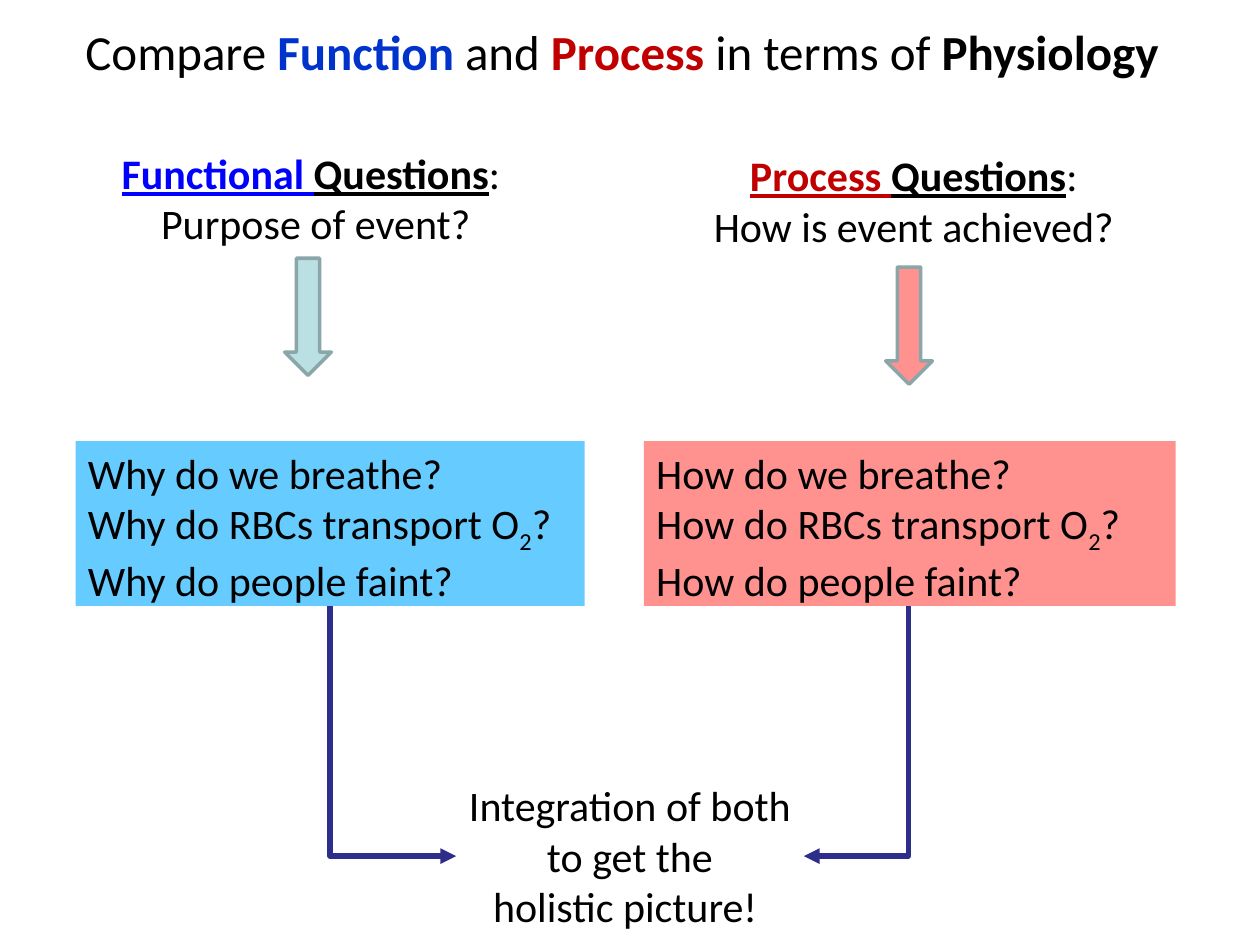
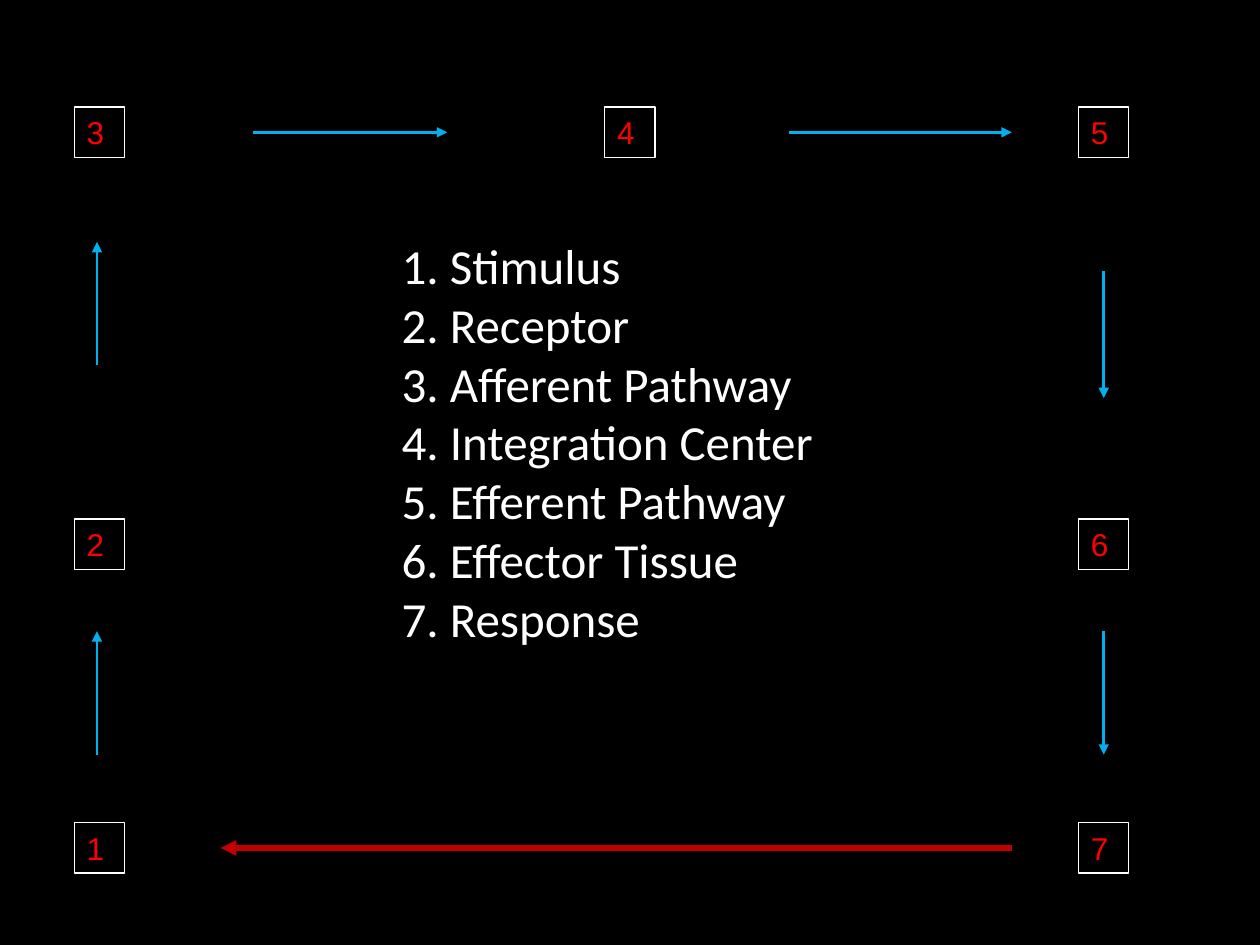
from lxml.etree import SubElement
from pptx import Presentation
from pptx.dml.color import RGBColor
from pptx.enum.shapes import MSO_CONNECTOR, MSO_SHAPE
from pptx.enum.text import MSO_ANCHOR, PP_ALIGN
from pptx.oxml.ns import qn
from pptx.util import Inches, Pt

BLACK, WHITE, RED = "000000", "FFFFFF", "C00000"
FUNCTION_BLUE, PROCESS_PINK = "66CCFF", "FF928F"
PATHWAY_BLUE, INTEGRATION_NAVY = "00B0F0", "2D2D8A"


def rgb(hex_colour):
    return RGBColor.from_string(hex_colour)


def inches(*lengths):
    return [Inches(length) for length in lengths]


def new_slide(deck, background):
    slide = deck.slides.add_slide(deck.slide_layouts[6])
    slide.background.fill.solid()
    slide.background.fill.fore_color.rgb = rgb(background)
    return slide


def write(shape, paragraphs, size, colour=BLACK, font="Calibri", align=PP_ALIGN.LEFT):
    """Fill a shape with paragraphs, each a list of (text, style) runs."""
    frame = shape.text_frame
    frame.word_wrap = True
    frame.vertical_anchor = MSO_ANCHOR.TOP
    for index, runs in enumerate(paragraphs):
        paragraph = frame.add_paragraph() if index else frame.paragraphs[0]
        paragraph.alignment = align
        for text, style in runs:
            run = paragraph.add_run()
            run.text = text
            run.font.name, run.font.size = font, Pt(size)
            run.font.color.rgb = rgb(style.get("colour", colour))
            run.font.bold = style.get("bold", False)
            run.font.underline = style.get("underline", False)
            if "baseline" in style:
                run._r.get_or_add_rPr().set("baseline", str(style["baseline"]))


def add_text(slide, box, paragraphs, size, **options):
    write(slide.shapes.add_textbox(*inches(*box)), paragraphs, size, **options)


def add_block(slide, kind, box, fill=None, line=None, width=0.75):
    block = slide.shapes.add_shape(kind, *inches(*box))
    block.shadow.inherit = False
    if fill:
        block.fill.solid()
        block.fill.fore_color.rgb = rgb(fill)
    else:
        block.fill.background()
    if line:
        block.line.color.rgb = rgb(line)
        block.line.width = Pt(width)
    else:
        block.line.fill.background()
    return block


def add_arrow(slide, start, end, colour, width, kind=MSO_CONNECTOR.STRAIGHT):
    arrow = slide.shapes.add_connector(kind, *inches(*start, *end))
    arrow.line.color.rgb = rgb(colour)
    arrow.line.width = Pt(width)
    SubElement(arrow.line._get_or_add_ln(), qn("a:tailEnd"), type="triangle")
    SubElement(arrow._element.spPr, qn("a:effectLst"))
    return arrow


def add_corner_arrow(slide, start, end):
    """Arrow that runs straight down from start, then sideways to end."""
    (x1, y1), (x2, y2) = start, end
    mid_x, mid_y = (x1 + x2) / 2, (y1 + y2) / 2
    half_w, half_h = (y2 - y1) / 2, abs(x2 - x1) / 2
    arrow = add_arrow(slide, (mid_x - half_w, mid_y - half_h),
                      (mid_x + half_w, mid_y + half_h),
                      INTEGRATION_NAVY, 3, MSO_CONNECTOR.ELBOW)
    properties = arrow._element.spPr
    properties.find(qn("a:prstGeom")).set("prst", "bentConnector2")
    turn = properties.find(qn("a:xfrm"))
    turn.set("rot", str((270 if x2 > x1 else 90) * 60000))
    if x2 > x1:
        turn.set("flipH", "1")


def question_column(slide, heading_box, topic, topic_colour, meaning,
                    arrow_at, arrow_fill, examples_box, examples_fill, asker):
    marked = {"bold": True, "underline": True}
    add_text(slide, heading_box,
             [[(f"{topic} ", {**marked, "colour": topic_colour}),
               ("Questions", marked), (": ", {})],
              [(meaning, {})]], 24, align=PP_ALIGN.CENTER)
    examples = add_block(slide, MSO_SHAPE.RECTANGLE, examples_box, examples_fill)
    write(examples,
          [[(f"{asker} do we breathe?", {})],
           [(f"{asker} do RBCs transport O", {}), ("2", {"baseline": -25000}),
            (f"? {asker} do people faint?", {})]], 24)
    add_block(slide, MSO_SHAPE.DOWN_ARROW, (*arrow_at, 0.37, 0.93),
              arrow_fill, "8AA6A8", 2)


def comparison_slide(deck):
    slide = new_slide(deck, WHITE)
    add_text(slide, (0.58, 0.12, 8.83, 0.57),
             [[("Compare ", {}),
               ("Function ", {"colour": "0033CC", "bold": True}),
               ("and ", {}),
               ("Process ", {"colour": RED, "bold": True}),
               ("in terms of ", {}),
               ("Physiology", {"bold": True})]], 28)
    question_column(slide, (0.6, 1.12, 3.81, 0.91), "Functional", "0000FF",
                    "Purpose of event?", (2.26, 2.05), "BBE0E3",
                    (0.6, 3.5, 4.04, 1.31), FUNCTION_BLUE, "Why")
    question_column(slide, (5.33, 1.14, 3.92, 0.91), "Process", RED,
                    "How is event achieved? ", (7.03, 2.12), PROCESS_PINK,
                    (5.11, 3.5, 4.22, 1.31), PROCESS_PINK, "How")

    left, top, width, height = integration = (3.62, 6.14, 2.76, 1.31)
    add_text(slide, integration,
             [[("Integration of both to get the", {})],
              [("holistic picture! ", {})]], 24, align=PP_ALIGN.CENTER)
    middle = top + height / 2
    add_corner_arrow(slide, (2.62, 4.81), (left, middle))
    add_corner_arrow(slide, (7.21, 4.81), (left + width, middle))


def reflex_loop_slide(deck):
    slide = new_slide(deck, BLACK)
    stages = ["Stimulus", "Receptor", "Afferent Pathway", "Integration Center",
              "Efferent Pathway", "Effector Tissue", "Response"]
    add_text(slide, (3.09, 1.82, 3.93, 3.4),
             [[(f"{number}. {stage}", {})] for number, stage in enumerate(stages, 1)],
             28, colour=WHITE)

    left, centre, right = 0.59, 4.8, 8.56
    top, middle, bottom = 0.85, 4.12, 6.53
    side = 0.4
    stage_corners = [(left, bottom), (left, middle), (left, top), (centre, top),
                     (right, top), (right, middle), (right, bottom)]
    for number, corner in enumerate(stage_corners, 1):
        label = add_block(slide, MSO_SHAPE.RECTANGLE, (*corner, side, side), line=WHITE)
        write(label, [[(str(number), {})]], 18, colour="FF0000", font="Arial")

    up_x, down_x = 0.77, right + side / 2
    across_y, return_y = top + side / 2, bottom + side / 2
    pathway = [((up_x, 5.99), (up_x, 5.01)), ((up_x, 2.9), (up_x, 1.92)),
               ((2.01, across_y), (3.55, across_y)),
               ((6.26, across_y), (8.03, across_y)),
               ((down_x, 2.15), (down_x, 3.16)), ((down_x, 5.01), (down_x, 5.99))]
    for start, end in pathway:
        add_arrow(slide, start, end, PATHWAY_BLUE, 1.5)
    add_arrow(slide, (8.03, return_y), (1.75, return_y), RED, 3)


def main():
    deck = Presentation()
    deck.slide_width, deck.slide_height = inches(10, 7.5)
    comparison_slide(deck)
    reflex_loop_slide(deck)
    deck.save("out.pptx")


if __name__ == "__main__":
    main()
